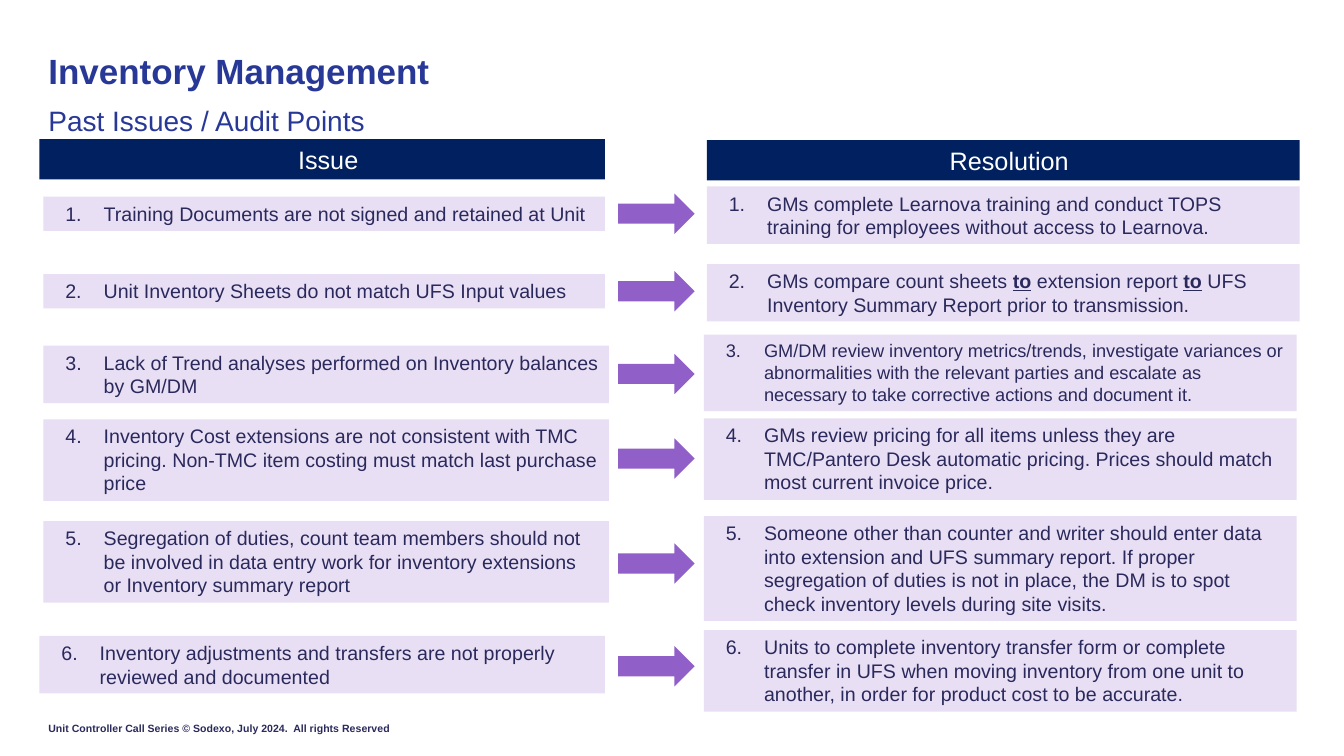
from dataclasses import dataclass

import pptx
import pptx.dml.color
import pptx.enum.shapes
import pptx.enum.text
import pptx.oxml
import pptx.util
from pptx.util import Inches

RGBColor = pptx.dml.color.RGBColor
Shapes = pptx.enum.shapes.MSO_SHAPE
Align = pptx.enum.text.PP_ALIGN
Anchor = pptx.enum.text.MSO_ANCHOR

INK = RGBColor(0x2A, 0x29, 0x5C)
BLUE = RGBColor(0x28, 0x38, 0x97)
NAVY = RGBColor(0x00, 0x20, 0x60)
LILAC = RGBColor(0xE9, 0xDF, 0xF4)
PURPLE = RGBColor(0x91, 0x5F, 0xC8)
WHITE = RGBColor(0xFF, 0xFF, 0xFF)


@dataclass(frozen=True)
class Box:
    left: float
    top: float
    width: float
    height: float


@dataclass(frozen=True)
class Entry:
    """One numbered statement; words between asterisks are emphasised."""
    text: str
    box: Box
    size: float = 14


@dataclass(frozen=True)
class Pair:
    issue: Entry
    arrow_top: float
    resolution: Entry


PAIRS = [
    Pair(Entry("Training Documents are not signed and retained at Unit",
               Box(0.43, 1.95, 5.57, 0.34)),
         1.92,
         Entry("GMs complete Learnova training and conduct TOPS training for "
               "employees without access to Learnova.",
               Box(7.01, 1.85, 5.88, 0.57))),
    Pair(Entry("Unit Inventory Sheets do not match UFS Input values",
               Box(0.43, 2.72, 5.57, 0.34)),
         2.69,
         Entry("GMs compare count sheets *to* extension report *to* UFS "
               "Inventory Summary Report prior to transmission.",
               Box(7.01, 2.62, 5.88, 0.57))),
    Pair(Entry("Lack of Trend analyses performed on Inventory balances by GM/DM",
               Box(0.43, 3.43, 5.61, 0.57)),
         3.51,
         Entry("GM/DM review inventory metrics/trends, investigate variances or "
               "abnormalities with the relevant parties and escalate as "
               "necessary to take corrective actions and document it.",
               Box(6.98, 3.32, 5.88, 0.76), size=13)),
    Pair(Entry("Inventory Cost extensions are not consistent with TMC pricing. "
               "Non-TMC item costing must match last purchase price",
               Box(0.43, 4.16, 5.61, 0.81)),
         4.35,
         Entry("GMs review pricing for all items unless they are TMC/Pantero "
               "Desk automatic pricing. Prices should match most current "
               "invoice price.",
               Box(6.98, 4.15, 5.88, 0.81))),
    Pair(Entry("Segregation of duties, count team members should not be involved "
               "in data entry work for inventory extensions or Inventory "
               "summary report",
               Box(0.43, 5.17, 5.61, 0.81)),
         5.39,
         Entry("Someone other than counter and writer should enter data into "
               "extension and UFS summary report. If proper segregation of "
               "duties is not in place, the DM is to spot check inventory "
               "levels during site visits.",
               Box(6.98, 5.12, 5.88, 1.04))),
    Pair(Entry("Inventory adjustments and transfers are not properly reviewed "
               "and documented",
               Box(0.39, 6.31, 5.61, 0.57)),
         6.41,
         Entry("Units to complete inventory transfer form or complete transfer "
               "in UFS when moving inventory from one unit to another, in order "
               "for product cost to be accurate.",
               Box(6.98, 6.25, 5.88, 0.81))),
]
HEADERS = [("Issue", Box(0.39, 1.38, 5.61, 0.4)),
           ("Resolution", Box(7.01, 1.39, 5.88, 0.4))]


def lengths(box: Box) -> list[int]:
    return [Inches(value) for value in (box.left, box.top, box.width, box.height)]


def set_number(paragraph, number: int) -> None:
    """Give the paragraph a hanging automatic number."""
    properties = paragraph._p.get_or_add_pPr()
    properties.set("marL", str(Inches(0.5)))
    properties.set("indent", str(Inches(-0.38)))
    bullet = pptx.oxml.parse_xml(
        '<a:buAutoNum xmlns:a="http://schemas.openxmlformats.org/drawingml/2006/main"'
        f' type="arabicPeriod" startAt="{number}"/>')
    properties.append(bullet)


def write_text(shape, text: str, *, size: float, color: RGBColor,
               bold: bool = False, align=Align.LEFT, anchor=Anchor.TOP,
               line_spacing: float = 1.0, inset: bool = True,
               number: int | None = None) -> None:
    frame = shape.text_frame
    frame.word_wrap = True
    frame.auto_size = pptx.enum.text.MSO_AUTO_SIZE.NONE
    frame.vertical_anchor = anchor
    frame.margin_left = frame.margin_right = Inches(0.1 if inset else 0)
    frame.margin_top = frame.margin_bottom = Inches(0.05 if inset else 0)
    paragraph = frame.paragraphs[0]
    paragraph.alignment = align
    paragraph.line_spacing = line_spacing
    if number is not None:
        set_number(paragraph, number)
    for index, part in enumerate(text.split("*")):
        emphasised = index % 2 == 1
        run = paragraph.add_run()
        run.text = part
        run.font.name = "Arial"
        run.font.size = pptx.util.Pt(size)
        run.font.color.rgb = color
        run.font.bold = bold or emphasised
        run.font.underline = emphasised


def add_block(slide, kind, box: Box, fill: RGBColor):
    shape = slide.shapes.add_shape(kind, *lengths(box))
    shape.shadow.inherit = False
    shape.fill.solid()
    shape.fill.fore_color.rgb = fill
    shape.line.fill.background()
    return shape


def add_entry(slide, entry: Entry, number: int) -> None:
    shape = add_block(slide, Shapes.RECTANGLE, entry.box, LILAC)
    write_text(shape, entry.text, size=entry.size, color=INK, number=number)


def main() -> None:
    presentation = pptx.Presentation()
    presentation.slide_width = Inches(13.33)
    presentation.slide_height = Inches(7.5)
    slide = presentation.slides.add_slide(presentation.slide_layouts[5])

    title = slide.shapes.title
    title.left, title.top, title.width, title.height = lengths(
        Box(0.48, 0.54, 11.5, 0.38))
    write_text(title, "Inventory Management", size=25, color=BLUE, bold=True,
               anchor=Anchor.MIDDLE, line_spacing=0.9, inset=False)
    subtitle = slide.shapes.add_textbox(*lengths(Box(0.48, 0.93, 11.5, 0.39)))
    write_text(subtitle, "Past Issues / Audit Points", size=20, color=BLUE,
               line_spacing=1.3, inset=False)
    footer = slide.shapes.add_textbox(*lengths(Box(0.48, 7.16, 4.5, 0.13)))
    write_text(footer,
               "Unit Controller Call Series © Sodexo, July 2024.  All rights Reserved",
               size=7.5, color=INK, bold=True, anchor=Anchor.MIDDLE, inset=False)

    for label, box in HEADERS:
        header = add_block(slide, Shapes.RECTANGLE, box, NAVY)
        write_text(header, label, size=18, color=WHITE, align=Align.CENTER,
                   anchor=Anchor.MIDDLE)
        header.text_frame.paragraphs[0]._p.get_or_add_pPr().set(
            "marL", str(Inches(0.12)))
    for number, pair in enumerate(PAIRS, start=1):
        add_entry(slide, pair.issue, number)
        add_block(slide, Shapes.RIGHT_ARROW,
                  Box(6.13, pair.arrow_top, 0.76, 0.4), PURPLE)
        add_entry(slide, pair.resolution, number)

    presentation.save("out.pptx")


if __name__ == "__main__":
    main()
